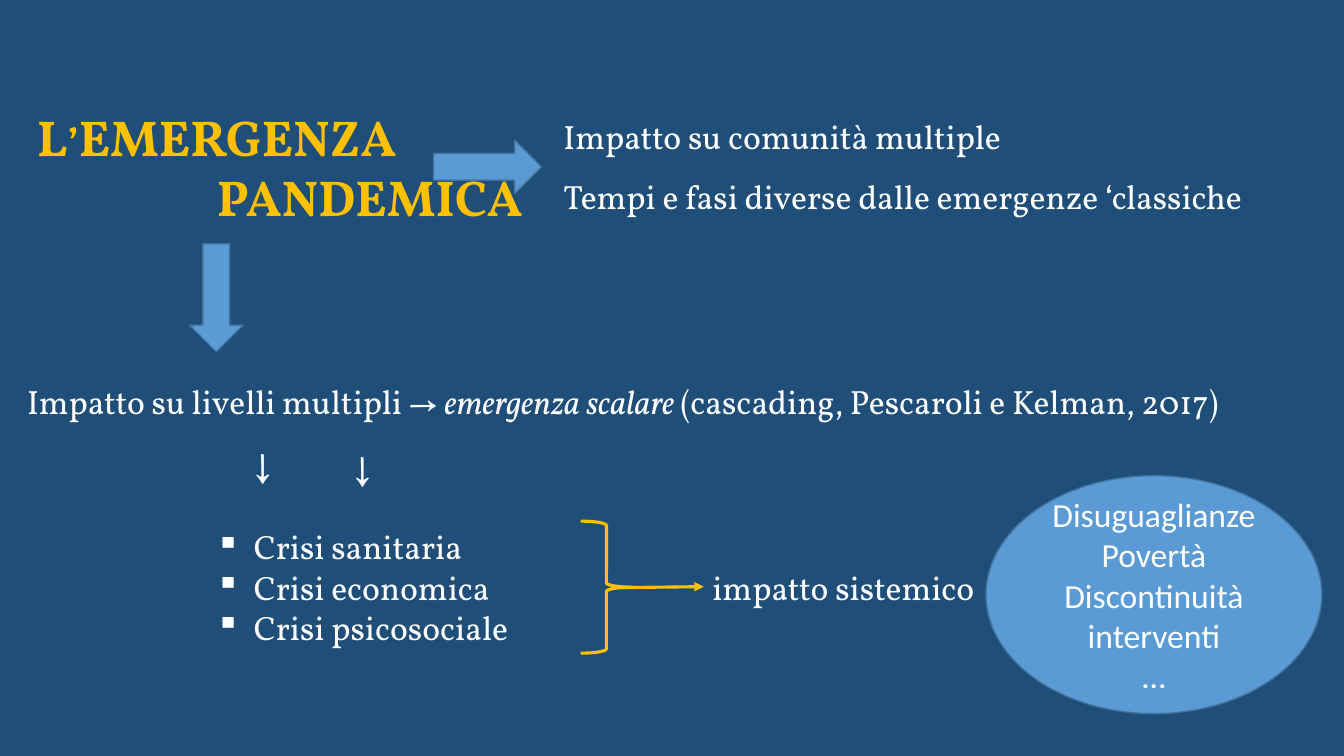
from typing import NamedTuple, Optional

from lxml.etree import SubElement
from pptx import Presentation
from pptx.dml.color import RGBColor
from pptx.enum.shapes import MSO_CONNECTOR, MSO_SHAPE
from pptx.enum.text import MSO_ANCHOR, MSO_AUTO_SIZE, PP_ALIGN
from pptx.oxml.ns import qn
from pptx.util import Inches, Pt

NAVY = RGBColor(0x1F, 0x4E, 0x79)
BLUE = RGBColor(0x5B, 0x9B, 0xD5)
EDGE = RGBColor(0x43, 0x73, 0x9E)
GOLD = RGBColor(0xFF, 0xC0, 0x00)
WHITE = RGBColor(0xFF, 0xFF, 0xFF)
SERIF = "Vollkorn"
SANS = "Calibri"


class Box(NamedTuple):
    left: float
    top: float
    width: float
    height: float


class Run(NamedTuple):
    text: str
    italic: bool = False


class Label(NamedTuple):
    box: Box
    lines: list[list[Run]]
    size: int = 24
    wrap: bool = True
    align: PP_ALIGN = PP_ALIGN.LEFT
    spacing: Optional[float] = None
    bullet: str = ""
    rotation: int = 0


class Figure(NamedTuple):
    kind: MSO_SHAPE
    box: Box
    fill: Optional[RGBColor] = BLUE
    line: RGBColor = EDGE
    weight: float = 1
    rotation: int = 0


LABELS = [
    Label(Box(5.49, 0.9, 7.32, 1.24),
          [[Run("Impatto su comunità multiple")],
           [Run("Tempi e fasi diverse dalle emergenze ‘classiche")]],
          wrap=False, spacing=1.5),
    Label(Box(0.17, 3.73, 12.93, 0.5),
          [[Run("Impatto su livelli multipli → "),
            Run("emergenza scalare ", True),
            Run("(cascading, Pescaroli e Kelman, 2017)")]]),
    Label(Box(2.37, 4.4, 0.59, 0.57), [[Run("→")]], size=28, wrap=False, rotation=90),
    Label(Box(3.36, 4.43, 0.59, 0.57), [[Run("→")]], size=28, wrap=False, rotation=90),
    Label(Box(2.04, 5.17, 3.23, 1.31),
          [[Run("Crisi sanitaria")], [Run("Crisi economica")], [Run("Crisi psicosociale")]],
          bullet="▪"),
    Label(Box(6.75, 5.58, 3.23, 0.5), [[Run("impatto sistemico")]], align=PP_ALIGN.CENTER),
]
FIGURES = [
    Figure(MSO_SHAPE.RIGHT_ARROW, Box(4.3, 1.39, 1.07, 0.53)),
    Figure(MSO_SHAPE.RIGHT_ARROW, Box(1.61, 2.69, 1.07, 0.53), rotation=90),
    Figure(MSO_SHAPE.RIGHT_BRACE, Box(5.76, 5.17, 0.51, 1.31), None, GOLD, 2.25),
]
INEQUALITIES = Figure(MSO_SHAPE.OVAL, Box(9.78, 4.72, 3.33, 2.36))
INEQUALITY_LINES = ["Disuguaglianze", "Povertà", "Discontinuità interventi", "…"]


def place(box: Box) -> list[int]:
    return [Inches(v) for v in box]


def style(p, size: int, name: str, color: RGBColor, align: PP_ALIGN) -> None:
    p.alignment = align
    p.font.size = Pt(size)
    p.font.name = name
    p.font.color.rgb = color


def add_bullet(p, char: str) -> None:
    pPr = p._p.get_or_add_pPr()
    pPr.set("marL", str(Inches(0.38)))
    pPr.set("indent", str(-Inches(0.38)))
    bullet = pPr.makeelement(qn("a:buChar"), {"char": char})
    pPr.insert_element_before(bullet, "a:tabLst", "a:defRPr", "a:extLst")


def add_title(s) -> None:
    title = s.shapes.title
    title.left, title.top, title.width, title.height = place(Box(0, 1, 4.3, 1.31))
    tf = title.text_frame
    tf.word_wrap = True
    tf.vertical_anchor = MSO_ANCHOR.TOP
    tf.auto_size = MSO_AUTO_SIZE.SHAPE_TO_FIT_TEXT
    p = tf.paragraphs[0]
    style(p, 36, SERIF, GOLD, PP_ALIGN.CENTER)
    p.font.bold = True
    r = p.add_run()
    r.text = "L’EMERGENZA PANDEMICA"
    r._r.get_or_add_rPr().set("cap", "small")


def add_label(s, label: Label) -> None:
    sp = s.shapes.add_textbox(*place(label.box))
    sp.rotation = label.rotation
    tf = sp.text_frame
    tf.word_wrap = label.wrap
    tf.auto_size = MSO_AUTO_SIZE.SHAPE_TO_FIT_TEXT
    for i, line in enumerate(label.lines):
        p = tf.add_paragraph() if i else tf.paragraphs[0]
        style(p, label.size, SERIF, WHITE, label.align)
        p.line_spacing = label.spacing
        if label.bullet:
            add_bullet(p, label.bullet)
        for run in line:
            r = p.add_run()
            r.text = run.text
            if run.italic:
                r.font.italic = True


def add_figure(s, figure: Figure):
    sp = s.shapes.add_shape(figure.kind, *place(figure.box))
    sp.rotation = figure.rotation
    sp.shadow.inherit = False
    if figure.fill is None:
        sp.fill.background()
    else:
        sp.fill.solid()
        sp.fill.fore_color.rgb = figure.fill
    sp.line.color.rgb = figure.line
    sp.line.width = Pt(figure.weight)
    return sp


def add_inequalities(s) -> None:
    tf = add_figure(s, INEQUALITIES).text_frame
    tf.word_wrap = True
    tf.vertical_anchor = MSO_ANCHOR.MIDDLE
    for i, text in enumerate(INEQUALITY_LINES):
        p = tf.add_paragraph() if i else tf.paragraphs[0]
        p.text = text
        style(p, 24, SANS, WHITE, PP_ALIGN.CENTER)


def add_brace_arrow(s) -> None:
    arrow = s.shapes.add_connector(MSO_CONNECTOR.STRAIGHT, Inches(6.1), Inches(5.83),
                                   Inches(6.98), Inches(5.82))
    arrow.line.color.rgb = GOLD
    arrow.line.width = Pt(2.25)
    SubElement(arrow.line._get_or_add_ln(), qn("a:tailEnd"), type="triangle")
    SubElement(arrow._element.spPr, qn("a:effectLst"))


def main() -> None:
    prs = Presentation()
    prs.slide_width, prs.slide_height = Inches(13.33), Inches(7.5)
    s = prs.slides.add_slide(prs.slide_layouts[5])
    s.background.fill.solid()
    s.background.fill.fore_color.rgb = NAVY
    add_title(s)
    for label in LABELS:
        add_label(s, label)
    for figure in FIGURES:
        add_figure(s, figure)
    add_brace_arrow(s)
    add_inequalities(s)
    prs.save("out.pptx")


if __name__ == "__main__":
    main()
